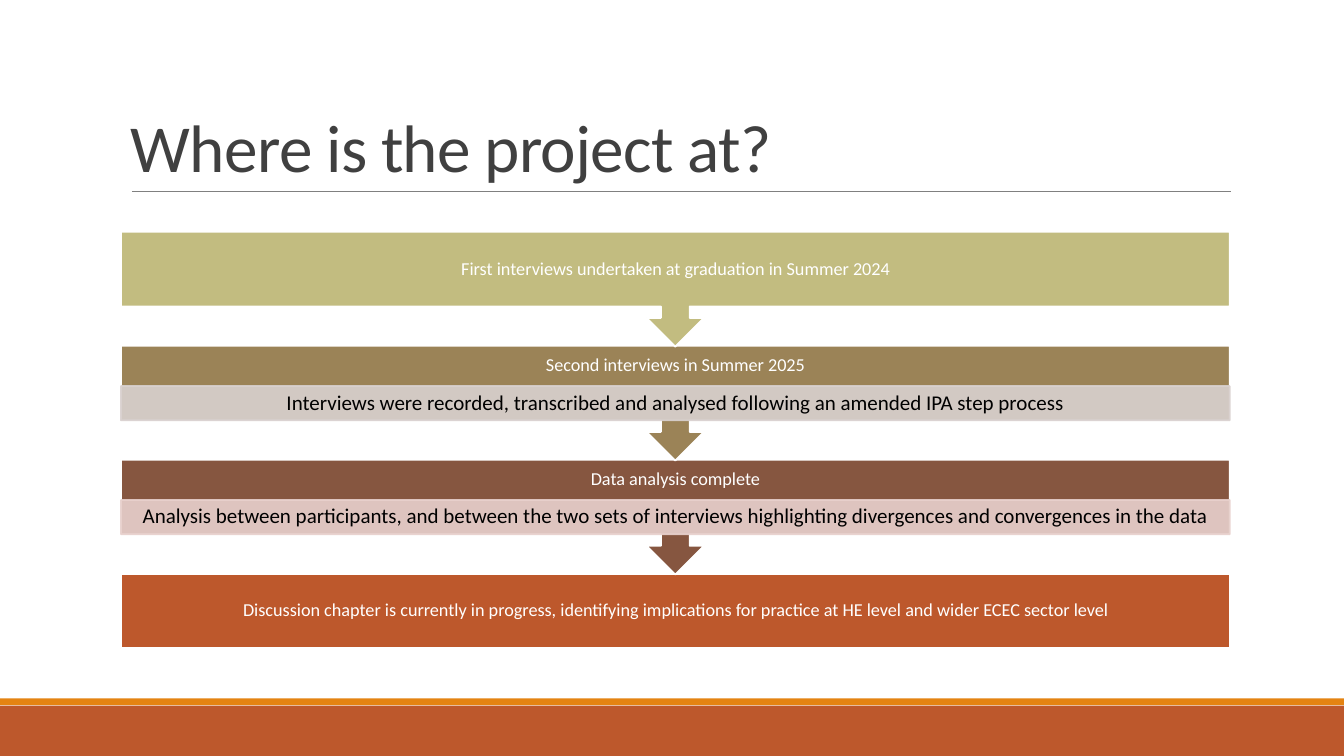
from lxml.etree import SubElement
from pptx import Presentation
from pptx.dml.color import RGBColor
from pptx.enum.shapes import MSO_CONNECTOR, MSO_SHAPE
from pptx.enum.text import MSO_ANCHOR, PP_ALIGN
from pptx.oxml.ns import qn
from pptx.util import Pt

WHITE = RGBColor(0xFF, 0xFF, 0xFF)
BLACK = RGBColor(0x00, 0x00, 0x00)
CHARCOAL = RGBColor(0x40, 0x40, 0x40)
GRAY = RGBColor(0x80, 0x80, 0x80)
RUST = RGBColor(0xBD, 0x58, 0x2C)
ORANGE = RGBColor(0xE4, 0x83, 0x12)
BROWN = RGBColor(0x86, 0x56, 0x40)
TAN = RGBColor(0x9B, 0x83, 0x57)
OLIVE = RGBColor(0xC2, 0xBC, 0x80)
PALE_PINK = RGBColor(0xE8, 0xD1, 0xCD)
PALE_TAUPE = RGBColor(0xD9, 0xD1, 0xCF)

SLIDE_WIDTH, SLIDE_HEIGHT = 960, 540
LEFT, WIDTH = 86.4, 792
FIRST_STEP_TOP, STEP_PITCH = 165.6, 81.4
CALLOUT_HEIGHT, BOX_HEIGHT = 82, 53.3
HEADER_HEIGHT = 28.8
DETAIL_HEIGHT = BOX_HEIGHT - HEADER_HEIGHT

STEPS = [
    ("First interviews undertaken at graduation in Summer 2024", OLIVE, None, None),
    ("Second interviews in Summer 2025", TAN,
     "Interviews were recorded, transcribed and analysed following an amended IPA step process",
     PALE_TAUPE),
    ("Data analysis complete", BROWN,
     "Analysis between participants, and between the two sets of interviews "
     "highlighting divergences and convergences in the data", PALE_PINK),
    ("Discussion chapter is currently in progress, identifying implications "
     "for practice at HE level and wider ECEC sector level", RUST, None, None),
]


class SlideBuilder:
    font_name = "Calibri"
    outline_width = 1.25

    def __init__(self, slide):
        self.slide = slide

    def block(self, kind, left, top, width, height, fill, outline=None, opacity=None):
        shape = self.slide.shapes.add_shape(kind, Pt(left), Pt(top), Pt(width), Pt(height))
        shape.shadow.inherit = False
        shape.fill.solid()
        shape.fill.fore_color.rgb = fill
        if outline is None:
            shape.line.fill.background()
        else:
            shape.line.color.rgb = outline
            shape.line.width = Pt(self.outline_width)
        if opacity is not None:
            for color in shape._element.spPr.iter(qn("a:srgbClr")):
                SubElement(color, qn("a:alpha"), val=str(opacity * 1000))
        return shape

    def label(self, shape, text, size, color, margins, align=PP_ALIGN.CENTER,
              anchor=MSO_ANCHOR.MIDDLE, line_spacing=0.9):
        frame = shape.text_frame
        frame.word_wrap = True
        frame.vertical_anchor = anchor
        (frame.margin_left, frame.margin_top,
         frame.margin_right, frame.margin_bottom) = [Pt(margin) for margin in margins]
        paragraph = frame.paragraphs[0]
        paragraph.text = text
        paragraph.alignment = align
        paragraph.line_spacing = line_spacing
        paragraph.font.name = self.font_name
        paragraph.font.size = Pt(size)
        paragraph.font.color.rgb = color
        return paragraph

    def title(self, text, left, top, width, height):
        box = self.slide.shapes.add_textbox(Pt(left), Pt(top), Pt(width), Pt(height))
        paragraph = self.label(box, text, 48, CHARCOAL, (7.2, 3.6, 7.2, 3.6),
                               PP_ALIGN.LEFT, MSO_ANCHOR.BOTTOM, 0.85)
        paragraph.runs[0]._r.get_or_add_rPr().set("spc", "-50")

    def rule(self, left, right, top):
        connector = self.slide.shapes.add_connector(
            MSO_CONNECTOR.STRAIGHT, Pt(left), Pt(top), Pt(right), Pt(top))
        connector.line.color.rgb = GRAY
        connector.line.width = Pt(0.5)
        SubElement(connector._element.spPr, qn("a:effectLst"))

    def step(self, top, heading, fill, detail, detail_fill, last):
        kind = MSO_SHAPE.RECTANGLE if last else MSO_SHAPE.DOWN_ARROW_CALLOUT
        height = BOX_HEIGHT if last else CALLOUT_HEIGHT
        shape = self.block(kind, LEFT, top, WIDTH, height, fill, WHITE)
        bottom_margin = 7.2 + (DETAIL_HEIGHT if detail else 0)
        self.label(shape, heading, 13, WHITE, (7.2, 7.2, 7.2, bottom_margin))
        if detail:
            band = self.block(MSO_SHAPE.RECTANGLE, LEFT, top + HEADER_HEIGHT, WIDTH,
                              DETAIL_HEIGHT, detail_fill, detail_fill, opacity=90)
            self.label(band, detail, 15, BLACK, (8.64, 1.44, 8.64, 1.44))


def main():
    presentation = Presentation()
    presentation.slide_width = Pt(SLIDE_WIDTH)
    presentation.slide_height = Pt(SLIDE_HEIGHT)
    builder = SlideBuilder(presentation.slides.add_slide(presentation.slide_layouts[6]))

    builder.block(MSO_SHAPE.RECTANGLE, 0, 504, SLIDE_WIDTH, 36, RUST)
    builder.block(MSO_SHAPE.RECTANGLE, 0, 498.8, SLIDE_WIDTH, 5, ORANGE)
    builder.rule(94.3, 879.1, 136.8)
    builder.title("Where is the project at?", LEFT, 22.4, WIDTH, 114.2)

    last_index = len(STEPS) - 1
    for index, step in reversed(list(enumerate(STEPS))):
        builder.step(FIRST_STEP_TOP + index * STEP_PITCH, *step, last=index == last_index)

    presentation.save("out.pptx")


if __name__ == "__main__":
    main()
